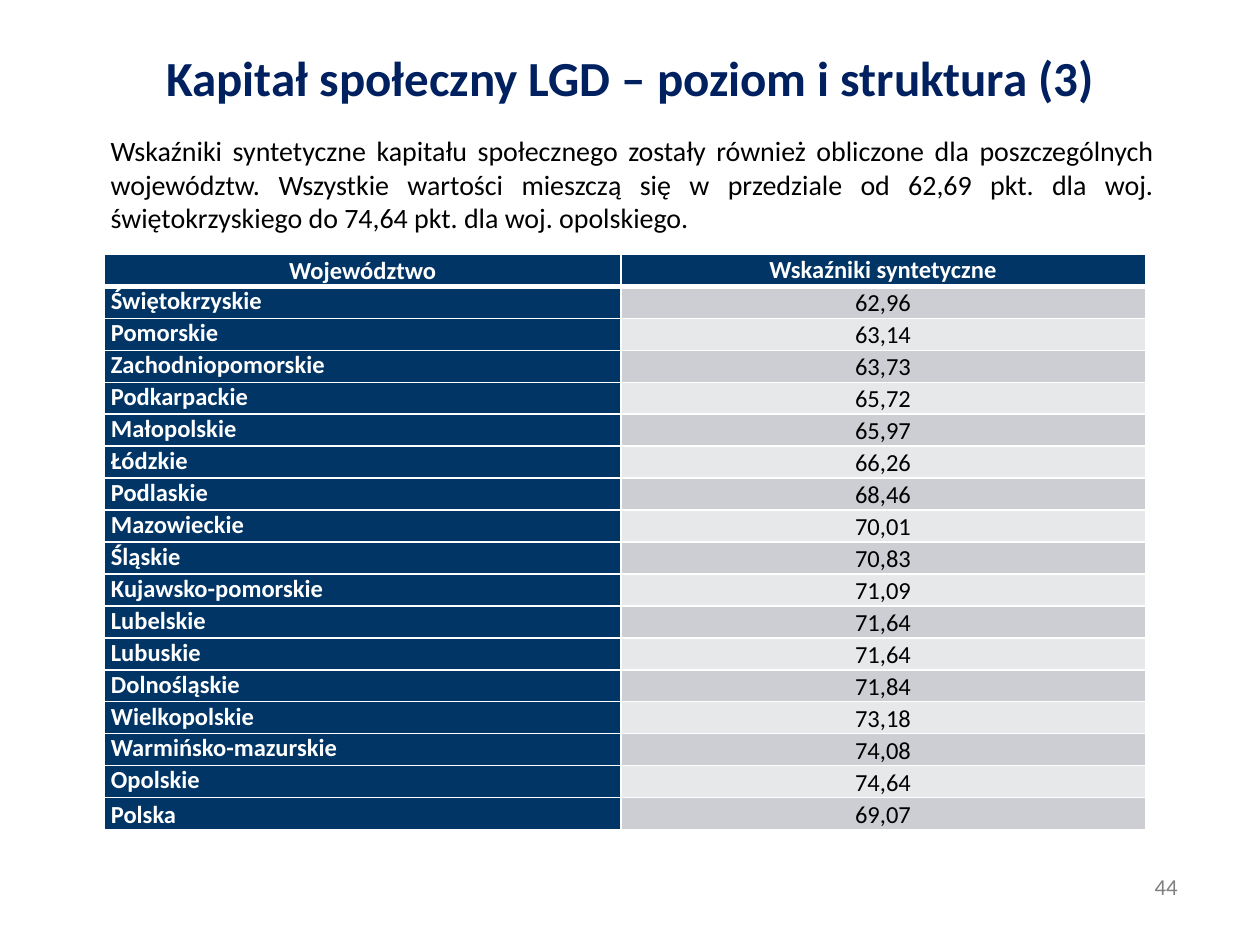
from dataclasses import dataclass
from typing import NamedTuple

from lxml.etree import SubElement
from pptx import Presentation
from pptx.dml.color import RGBColor
from pptx.enum.text import MSO_ANCHOR as Anchor, PP_ALIGN as Align
from pptx.oxml.ns import qn
from pptx.util import Inches, Pt

SLIDE_WIDTH, SLIDE_HEIGHT = Inches(10), Inches(7.5)
TITLE_ONLY = 5


@dataclass(frozen=True)
class Theme:
    font: str = "Calibri"
    title: str = "002060"
    header: str = "013565"
    bands: tuple = ("CCCED3", "E7E8EA")
    white: str = "FFFFFF"
    black: str = "000000"
    grey: str = "808080"
    title_size: int = 28
    body_size: int = 16
    table_size: int = 14
    number_size: int = 13


class Area(NamedTuple):
    """Position and size as percentages of the slide's width and height."""
    left: float
    top: float
    width: float
    height: float

    def lengths(self) -> tuple:
        return (int(SLIDE_WIDTH * self.left / 100), int(SLIDE_HEIGHT * self.top / 100),
                int(SLIDE_WIDTH * self.width / 100), int(SLIDE_HEIGHT * self.height / 100))


class TextStyle(NamedTuple):
    size: int
    color: str
    bold: bool = False
    align: Align = Align.CENTER


class Region(NamedTuple):
    name: str
    indicator: str


THEME = Theme()
TITLE_AREA = Area(5, 4, 90, 12.4)
INTRO_AREA = Area(7.8, 13.47, 84.8, 12.13)
TABLE_AREA = Area(8.3, 26.93, 82.6, 60.93)
NUMBER_AREA = Area(88.6, 91.73, 7.9, 4.27)
NAME_COLUMN_SHARE = 0.496

TITLE = "Kapitał społeczny LGD – poziom i struktura (3)"
INTRO = ("Wskaźniki syntetyczne kapitału społecznego zostały również obliczone dla "
         "poszczególnych województw. Wszystkie wartości mieszczą się w przedziale od "
         "62,69 pkt. dla woj. świętokrzyskiego do 74,64 pkt. dla woj. opolskiego.")
HEADER = Region("Województwo", "Wskaźniki syntetyczne")
REGIONS = [
    Region("Świętokrzyskie", "62,96"),
    Region("Pomorskie", "63,14"),
    Region("Zachodniopomorskie", "63,73"),
    Region("Podkarpackie", "65,72"),
    Region("Małopolskie", "65,97"),
    Region("Łódzkie", "66,26"),
    Region("Podlaskie", "68,46"),
    Region("Mazowieckie", "70,01"),
    Region("Śląskie", "70,83"),
    Region("Kujawsko-pomorskie", "71,09"),
    Region("Lubelskie", "71,64"),
    Region("Lubuskie", "71,64"),
    Region("Dolnośląskie", "71,84"),
    Region("Wielkopolskie", "73,18"),
    Region("Warmińsko-mazurskie", "74,08"),
    Region("Opolskie", "74,64"),
    Region("Polska", "69,07"),
]


def write(text_frame, text: str, style: TextStyle) -> None:
    paragraph = text_frame.paragraphs[0]
    paragraph.text = text
    paragraph.alignment = style.align
    font = paragraph.font
    font.name, font.size, font.bold = THEME.font, Pt(style.size), style.bold
    font.color.rgb = RGBColor.from_string(style.color)


def add_title(slide) -> None:
    title = slide.shapes.title
    title.left, title.top, title.width, title.height = TITLE_AREA.lengths()
    title.text_frame.vertical_anchor = Anchor.TOP
    title.text_frame.margin_top = Inches(0.08)
    write(title.text_frame, TITLE, TextStyle(THEME.title_size, THEME.title, True))


def add_text(slide, area: Area, text: str, style: TextStyle) -> None:
    text_frame = slide.shapes.add_textbox(*area.lengths()).text_frame
    text_frame.word_wrap = True
    write(text_frame, text, style)


def set_borders(cell, bottom_width: int) -> None:
    """Draw white lines around a cell; they must precede its fill in the XML."""
    properties = cell._tc.get_or_add_tcPr()
    for side, width in (("L", 1), ("R", 1), ("T", 1), ("B", bottom_width)):
        line = SubElement(properties, qn(f"a:ln{side}"), w=str(Pt(width)))
        fill = SubElement(line, qn("a:solidFill"))
        SubElement(fill, qn("a:srgbClr"), val=THEME.white)


def fill_cell(cell, text: str, style: TextStyle, fill: str, anchor: Anchor,
              bottom_width: int = 1) -> None:
    cell.margin_left = cell.margin_right = Inches(0.05)
    cell.margin_top = cell.margin_bottom = 0
    cell.vertical_anchor = anchor
    set_borders(cell, bottom_width)
    cell.fill.solid()
    cell.fill.fore_color.rgb = RGBColor.from_string(fill)
    write(cell.text_frame, text, style)


def add_region_table(slide) -> None:
    row_count = len(REGIONS) + 1
    left, top, width, height = TABLE_AREA.lengths()
    table = slide.shapes.add_table(row_count, 2, left, top, width, height).table
    table.columns[0].width = int(width * NAME_COLUMN_SHARE)
    table.columns[1].width = width - table.columns[0].width
    for row in table.rows:
        row.height = height // row_count

    heading = TextStyle(THEME.table_size, THEME.white, True)
    name_style = heading._replace(align=Align.LEFT)
    value_style = TextStyle(THEME.table_size, THEME.black)
    for column, (text, anchor) in enumerate(zip(HEADER, (Anchor.BOTTOM, Anchor.MIDDLE))):
        fill_cell(table.cell(0, column), text, heading, THEME.header, anchor, 3)
    for index, region in enumerate(REGIONS):
        is_total = region is REGIONS[-1]
        fill_cell(table.cell(index + 1, 0), region.name, name_style, THEME.header,
                  Anchor.BOTTOM if is_total else Anchor.TOP)
        fill_cell(table.cell(index + 1, 1), region.indicator, value_style,
                  THEME.bands[index % 2], Anchor.BOTTOM)


def main() -> None:
    presentation = Presentation()
    presentation.slide_width, presentation.slide_height = SLIDE_WIDTH, SLIDE_HEIGHT
    slide = presentation.slides.add_slide(presentation.slide_layouts[TITLE_ONLY])
    add_title(slide)
    add_text(slide, INTRO_AREA, INTRO,
             TextStyle(THEME.body_size, THEME.black, align=Align.JUSTIFY))
    add_region_table(slide)
    add_text(slide, NUMBER_AREA, "44", TextStyle(THEME.number_size, THEME.grey))
    presentation.save("out.pptx")


if __name__ == "__main__":
    main()
